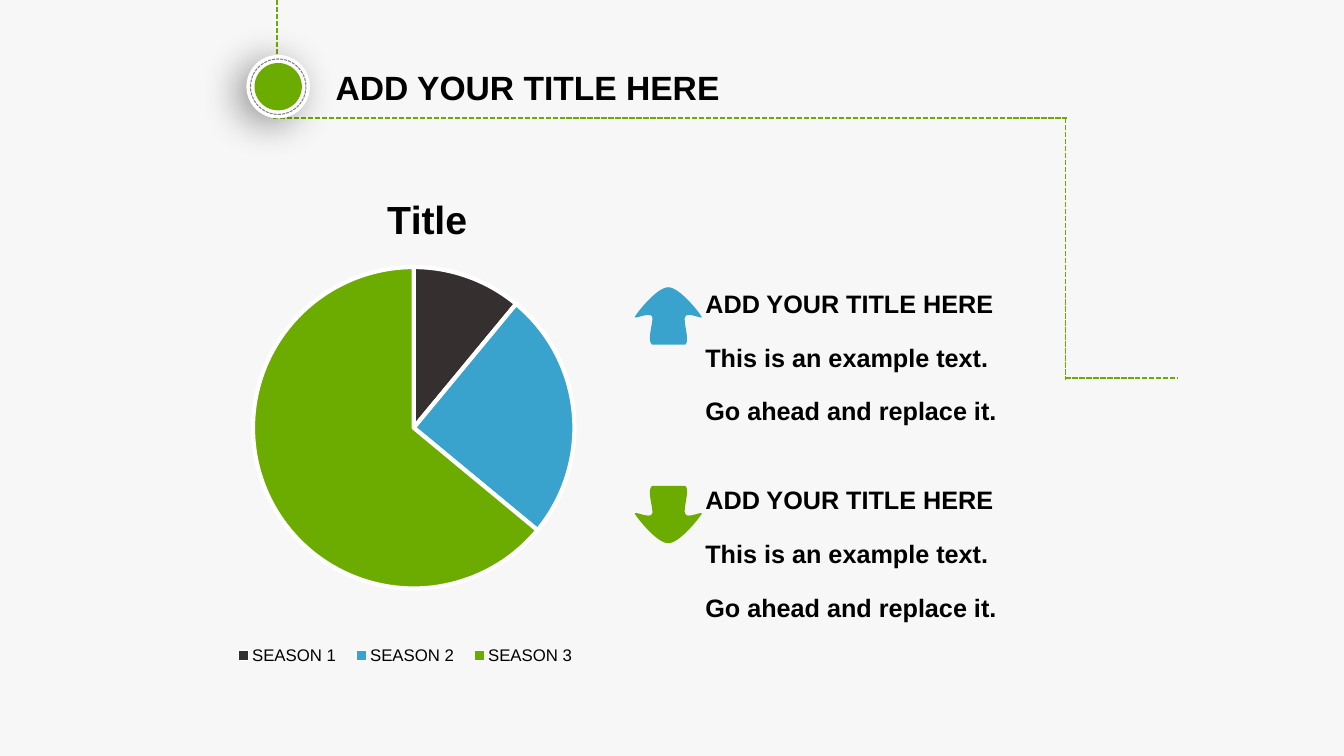
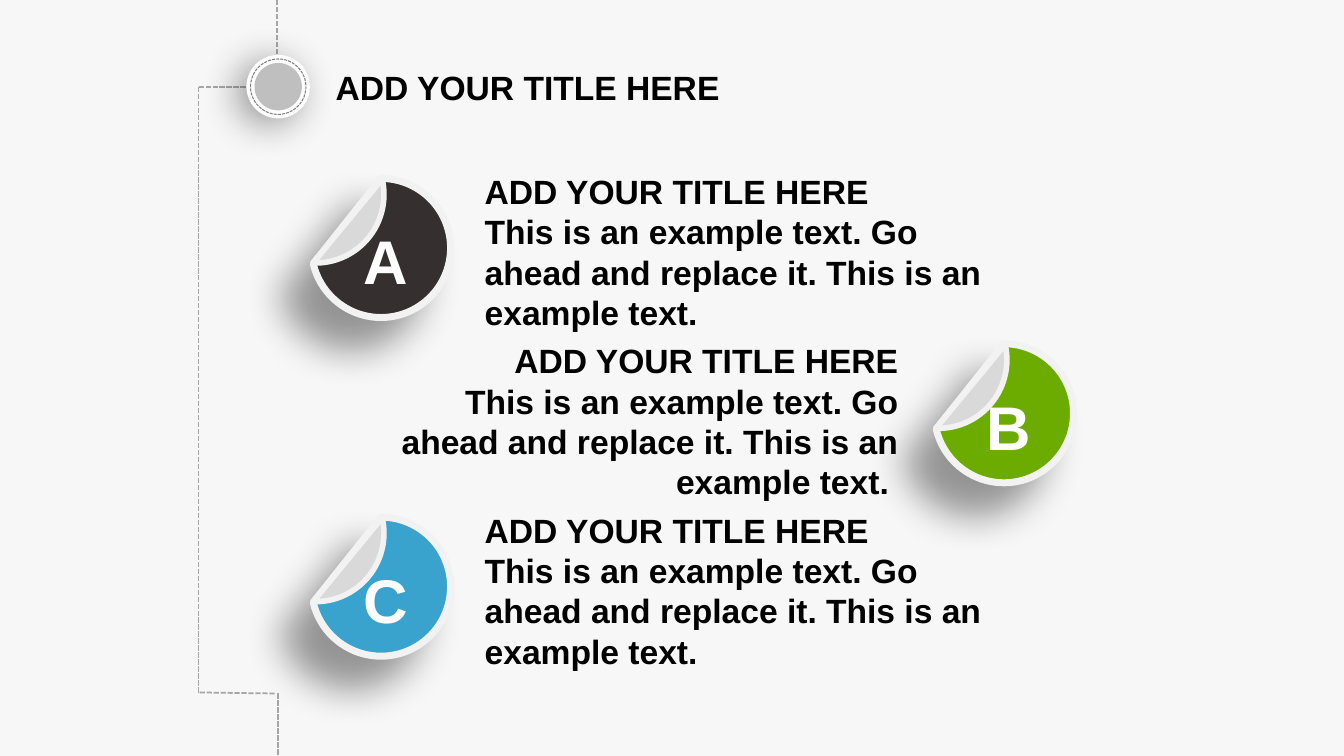
from lxml import etree
from pptx import Presentation
from pptx.chart.data import CategoryChartData
from pptx.dml.color import RGBColor
from pptx.enum.chart import XL_CHART_TYPE, XL_LEGEND_POSITION
from pptx.enum.dml import MSO_LINE
from pptx.enum.shapes import MSO_CONNECTOR, MSO_SHAPE
from pptx.enum.text import MSO_ANCHOR, MSO_AUTO_SIZE, PP_ALIGN
from pptx.oxml.ns import qn
from pptx.util import Inches, Pt

PIE = XL_CHART_TYPE.PIE
LEGEND_BOTTOM = XL_LEGEND_POSITION.BOTTOM
DASHED = MSO_LINE.SQUARE_DOT
STRAIGHT = MSO_CONNECTOR.STRAIGHT
OVAL, CHORD = MSO_SHAPE.OVAL, MSO_SHAPE.CHORD
TOP, MIDDLE, BOTTOM = MSO_ANCHOR.TOP, MSO_ANCHOR.MIDDLE, MSO_ANCHOR.BOTTOM
LEFT, CENTER, RIGHT = PP_ALIGN.LEFT, PP_ALIGN.CENTER, PP_ALIGN.RIGHT
NO_AUTOFIT = MSO_AUTO_SIZE.NONE

GREEN, BLUE, CHARCOAL = "6CAC00", "39A3CD", "352F2F"
BLACK, WHITE, PAGE, RIM, FOLD = "000000", "FFFFFF", "F7F7F7", "F2F2F2", "D9D9D9"
RING, ROUTE_GRAY, BADGE_GRAY = "808080", "A6A6A6", "BFBFBF"
FONT = "Arial"
TITLE_ONLY = 5

HEADING = "ADD YOUR TITLE HERE"
EXAMPLE = "This is an example text. Go ahead and replace it. This is an example text."
TIP_LINES = (HEADING, "This is an example text.", "Go ahead and replace it.")

# Upward arrow: start point, then segments, a straight one giving only its end
# and a curved one giving two handles and its end
ARROW_LEFT, ARROW_HEIGHT = 0.02, 0.57
ARROW_START = (ARROW_LEFT, 0.29)
ARROW_SEGMENTS = (
    ((0, 0.33), (0.16, 0.24), (0.19, 0.29)),
    ((0.21, 0.33), (0.13, 0.53), (0.19, 0.57)),
    ((0.52, 0.57),),
    ((0.57, 0.53), (0.49, 0.33), (0.52, 0.29)),
    ((0.54, 0.24), (0.71, 0.33), (0.68, 0.29)),
    ((0.65, 0.24), (0.46, 0), (0.35, 0)),
    ((0.24, 0), (0.05, 0.24), ARROW_START),
)


def color(value):
    return RGBColor.from_string(value)


def apply(target, **values):
    for name, value in values.items():
        setattr(target, name, value)


def set_font(font, size, ink=BLACK, bold=True):
    apply(font, name=FONT, size=Pt(size), bold=bold)
    font.color.rgb = color(ink)


def paint(shape, fill=None, line=None, width=1):
    """Set fill and outline, None meaning neither, and drop the theme shadow."""
    shape.shadow.inherit = False
    if fill:
        shape.fill.solid()
        shape.fill.fore_color.rgb = color(fill)
    else:
        shape.fill.background()
    if line:
        shape.line.color.rgb = color(line)
        shape.line.width = Pt(width)
    else:
        shape.line.fill.background()


def cast_shadow(shape, distance, degrees):
    effects = shape.element.spPr.find(qn("a:effectLst"))
    shadow = etree.SubElement(
        effects, qn("a:outerShdw"), blurRad=str(Pt(28)), dist=str(Pt(distance)),
        dir=str(degrees * 60000), algn="ctr", rotWithShape="0")
    ink = etree.SubElement(shadow, qn("a:srgbClr"), val=BLACK)
    etree.SubElement(ink, qn("a:alpha"), val="40000")


def add_shape(page, kind, box):
    return page.shapes.add_shape(kind, *map(Inches, box))


def add_route(page, segments, ink):
    for segment in segments:
        line = page.shapes.add_connector(STRAIGHT, *map(Inches, segment))
        line.line.color.rgb = color(ink)
        apply(line.line, width=Pt(1.25), dash_style=DASHED)
        etree.SubElement(line.element.spPr, qn("a:effectLst"))


def add_badge(page, center_x, center_y, fill):
    disks = ((0.63, WHITE, None), (0.47, fill, None), (0.55, None, RING))
    for size, inside, outline in disks:
        box = (center_x - size / 2, center_y - size / 2, size, size)
        disk = add_shape(page, OVAL, box)
        paint(disk, inside, outline, 0.75)
        if outline:
            disk.line.dash_style = DASHED
        if inside == WHITE:
            cast_shadow(disk, 8, 150)


def add_page(deck, route, route_color, badge_color):
    """Add a slide with its dashed route, badge and title."""
    page = deck.slides.add_slide(deck.slide_layouts[TITLE_ONLY])
    add_route(page, ((2.75, 0, 2.75, 0.83),) + route, route_color)
    add_badge(page, 2.76, 0.86, badge_color)
    title = page.shapes.title
    apply(title, left=Inches(3.23), top=Inches(0.51),
          width=Inches(5.39), height=Inches(0.7))
    frame = title.text_frame
    frame.text = HEADING
    apply(frame, vertical_anchor=MIDDLE, auto_size=NO_AUTOFIT, word_wrap=True)
    frame.paragraphs[0].alignment = LEFT
    set_font(frame.paragraphs[0].runs[0].font, 24)
    return page


def add_text(page, box, lines, size, anchor=TOP, **para_format):
    frame = page.shapes.add_textbox(*map(Inches, box)).text_frame
    apply(frame, word_wrap=True, vertical_anchor=anchor)
    for index, line in enumerate(lines):
        para = frame.paragraphs[0] if index == 0 else frame.add_paragraph()
        apply(para, **para_format)
        span = para.add_run()
        span.text = line
        set_font(span.font, size)


def place_chart_part(chart, tag, chart_size, *lengths):
    """Lay out a chart part; lengths are x, y, w, h in inches from its corner."""
    part = chart.element.xpath(f"c:chart/c:{tag}")[0]
    for old in part.findall(qn("c:layout")):
        part.remove(old)
    layout = etree.Element(qn("c:layout"))
    manual = etree.SubElement(layout, qn("c:manualLayout"))
    if tag == "plotArea":
        etree.SubElement(manual, qn("c:layoutTarget"), val="inner")
    for mode in ("xMode", "yMode"):
        etree.SubElement(manual, qn(f"c:{mode}"), val="edge")
    for name, length, whole in zip("xywh", lengths, chart_size * 2):
        etree.SubElement(manual, qn(f"c:{name}"), val=str(length / whole))
    overlay = part.find(qn("c:overlay"))
    if overlay is None:
        part.insert(0, layout)
    else:
        overlay.addprevious(layout)


def add_season_pie(page, box):
    data = CategoryChartData()
    data.categories = ["SEASON 1", "SEASON 2", "SEASON 3"]
    data.add_series("Series 1", (11, 25, 64))
    chart = page.shapes.add_chart(PIE, *map(Inches, box), data).chart
    set_font(chart.font, 18, bold=False)

    chart.has_title = True
    title_frame = chart.chart_title.text_frame
    title_frame.text = "Title"
    set_font(title_frame.paragraphs[0].runs[0].font, 28)

    chart.has_legend = True
    apply(chart.legend, position=LEGEND_BOTTOM, include_in_layout=False)
    set_font(chart.legend.font, 12, bold=False)

    plot = chart.plots[0]
    plot.vary_by_categories = True
    for index, fill in enumerate((CHARCOAL, BLUE, GREEN)):
        slice_format = plot.series[0].points[index].format
        slice_format.fill.solid()
        slice_format.fill.fore_color.rgb = color(fill)
        slice_format.line.color.rgb = color(WHITE)
        slice_format.line.width = Pt(3)

    size = box[2:]
    place_chart_part(chart, "title", size, 2.42, 0.31)
    place_chart_part(chart, "plotArea", size, 1.16, 1.09, 3.19, 3.19)
    place_chart_part(chart, "legend", size, 0.87, 4.75, 3.6, 0.39)


def add_arrow(page, left, top, fill, downward):
    def flip(point):
        x, y = point
        return x, ARROW_HEIGHT - y if downward else y

    def locate(point):
        x, y = flip(point)
        return Inches(left + x), Inches(top + y)

    builder = page.shapes.build_freeform(*locate(ARROW_START))
    builder.add_line_segments([locate(segment[-1]) for segment in ARROW_SEGMENTS])
    arrow = builder.convert_to_shape()
    sides = list(arrow.element.iter(qn("a:lnTo")))
    for side, segment in zip(sides, ARROW_SEGMENTS):
        if len(segment) == 1:
            continue
        curve = etree.Element(qn("a:cubicBezTo"))
        for x, y in map(flip, segment):
            etree.SubElement(curve, qn("a:pt"), x=str(Inches(x - ARROW_LEFT)),
                             y=str(Inches(y)))
        side.getparent().replace(side, curve)
    paint(arrow, fill)


def add_tip(page, left, top, arrow_top, fill, downward):
    """Add three lines of text with an arrow to their left."""
    add_text(page, (left, top, 3.36, 1.62), TIP_LINES, 18,
             line_spacing=1.5, space_after=Pt(6))
    add_arrow(page, left - 0.62, arrow_top, fill, downward)


def add_chord(page, box, start, end, fill, rim_width):
    chord = add_shape(page, CHORD, box)
    for index, degrees in enumerate((start, end)):
        chord.adjustments[index] = degrees * 0.6
    paint(chord, fill, RIM, rim_width)
    return chord


def add_sticker(page, left, top, letter, fill):
    """Add a lettered round sticker with its upper left folded over."""
    disk = add_chord(page, (left, top, 1.38, 1.38), 270, 167, fill, 5)
    cast_shadow(disk, 30, 135)
    frame = disk.text_frame
    apply(frame, vertical_anchor=BOTTOM, margin_left=Inches(0.1),
          margin_top=Inches(0.05), margin_right=0, margin_bottom=0)
    para = frame.paragraphs[0]
    para.alignment = CENTER
    span = para.add_run()
    span.text = letter
    set_font(span.font, 44, WHITE)
    add_chord(page, (left - 0.64, top - 0.52, 1.36, 1.36), 347, 92, FOLD, 4)


def build_pie_page(deck):
    route = ((2.71, 1.17, 10.59, 1.17), (10.57, 1.17, 10.57, 3.77),
             (10.57, 3.75, 11.68, 3.75))
    page = add_page(deck, route, GREEN, GREEN)
    add_season_pie(page, (1.35, 1.56, 6.48, 5.55))
    add_tip(page, 6.9, 2.66, 2.85, BLUE, False)
    add_tip(page, 6.9, 4.61, 4.82, GREEN, True)


def build_sticker_page(deck):
    route = ((1.97, 0.86, 2.8, 0.86), (1.97, 0.86, 1.97, 6.88),
             (1.98, 6.87, 2.73, 6.88), (2.76, 6.88, 2.76, 7.5))
    page = add_page(deck, route, ROUTE_GRAY, BADGE_GRAY)
    rows = (
        ("A", CHARCOAL, 3.09, 1.77, 4.71, LEFT, EXAMPLE),
        ("B", GREEN, 9.27, 3.41, 3.7, RIGHT, EXAMPLE + " "),
        ("C", BLUE, 3.09, 5.13, 4.71, LEFT, EXAMPLE),
    )
    for index, (letter, fill, left, top, text_left, side, text) in enumerate(rows):
        add_sticker(page, left, top, letter, fill)
        add_text(page, (text_left, 1.95 + 1.68 * index, 5.31, 1.09),
                 (HEADING, text), 24, MIDDLE, alignment=side)


def main():
    deck = Presentation()
    apply(deck, slide_width=Inches(40 / 3), slide_height=Inches(7.5))
    background = deck.slide_master.background.fill
    background.solid()
    background.fore_color.rgb = color(PAGE)
    build_pie_page(deck)
    build_sticker_page(deck)
    deck.save("out.pptx")


if __name__ == "__main__":
    main()
